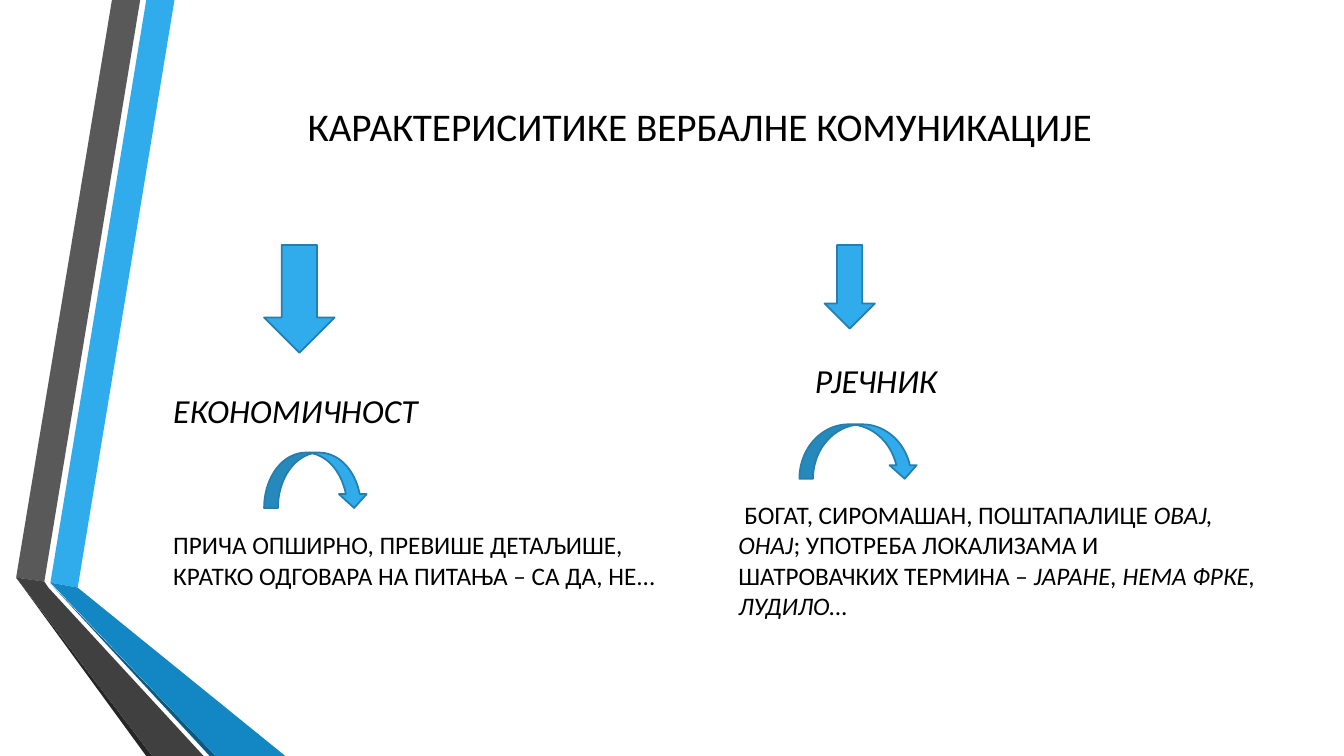
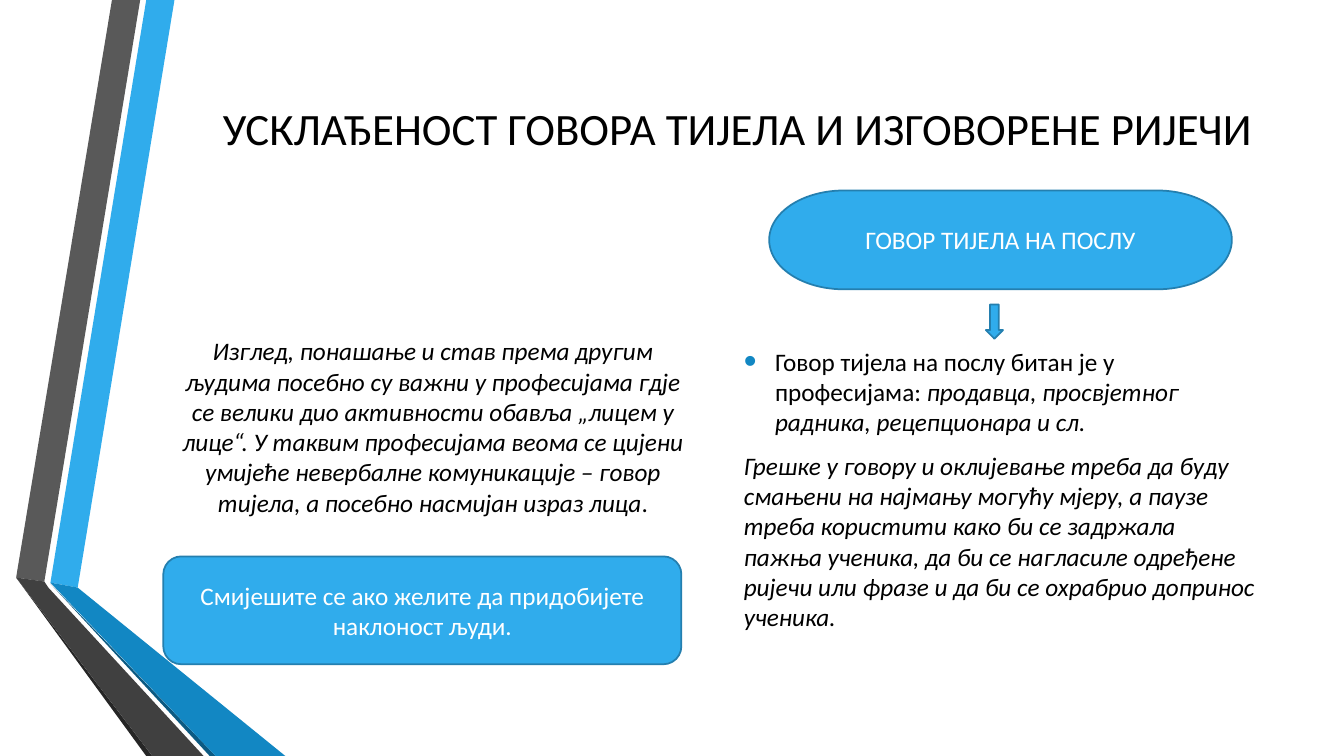
from lxml import etree
from pptx import Presentation
from pptx import util as u
from pptx.dml.color import RGBColor
from pptx.enum import shapes, text
from pptx.oxml import ns

# Shared style
SKY = RGBColor(0x30, 0xAC, 0xEC)
SKY_EDGE = RGBColor(0x24, 0x7F, 0xAF)
BLUE = RGBColor(0x12, 0x87, 0xC3)
NAVY = RGBColor(0x0C, 0x5A, 0x82)
GREY = RGBColor(0x59, 0x59, 0x59)
CHARCOAL = RGBColor(0x40, 0x40, 0x40)
SOOT = RGBColor(0x26, 0x26, 0x26)
BLACK = RGBColor(0, 0, 0)
WHITE = RGBColor(0xFF, 0xFF, 0xFF)
FONT = "Calibri"
BODY_SIZE, HEADING_SIZE = 18, 24
SHAPE = shapes.MSO_SHAPE

# Positions are percentages of the slide's width and height
LEFT, RIGHT, COLUMN = 12.15, 54.2, 40.13
RIBBONS = [
    (SKY, [(3.75, 77.07), (5.78, 77.73), (12.98, 0), (10.88, 0)]),
    (GREY, [(10.43, 0), (8.33, 0), (1.2, 76.4), (3.3, 76.93)]),
    (SOOT, [(1.2, 76.4), (10.88, 100), (11.33, 100)]),
    (NAVY, [(3.75, 77.2), (15.6, 100), (16.05, 100)]),
    (BLUE, [(3.75, 77.07), (16.05, 100), (21.23, 100), (5.78, 77.73)]),
    (CHARCOAL, [(1.2, 76.4), (11.33, 100), (15.15, 100), (3.6, 77.73), (3.3, 76.93)]),
]


class Deck:
    def __init__(self):
        self.presentation = Presentation()
        self.presentation.slide_width = u.Inches(13.33)
        self.presentation.slide_height = u.Inches(7.5)
        self.layout = self.presentation.slide_layouts[5]
        self.slide = None

    def place(self, x, y):
        return (u.Emu(int(self.presentation.slide_width * x / 100)),
                u.Emu(int(self.presentation.slide_height * y / 100)))

    def box(self, left, top, width, height):
        return self.place(left, top) + self.place(width, height)

    def add_slide(self, title, size, *area):
        first = self.slide is None
        self.slide = self.presentation.slides.add_slide(self.layout)
        if first:
            self.add_ribbons()
        shape = self.slide.shapes.title
        shape.left, shape.top, shape.width, shape.height = self.box(*area)
        self.prepare(shape.text_frame)
        self.fill_paragraph(shape.text_frame.paragraphs[0], [(title, False)], size,
                            align=text.PP_ALIGN.CENTER)

    def add_ribbons(self):
        """Draw the side ribbons and keep them on the layout, behind all slides."""
        for color, points in RIBBONS:
            start, *others = [self.place(*point) for point in points]
            builder = self.slide.shapes.build_freeform(*start)
            builder.add_line_segments(others, close=True)
            ribbon = builder.convert_to_shape()
            ribbon.shadow.inherit = False
            ribbon.fill.solid()
            ribbon.fill.fore_color.rgb = color
            ribbon.line.fill.background()
            self.layout.shapes._spTree.append(ribbon._element)

    def prepare(self, frame, anchor=text.MSO_ANCHOR.MIDDLE):
        frame.word_wrap = True
        frame.auto_size = text.MSO_AUTO_SIZE.NONE
        frame.vertical_anchor = anchor

    def fill_paragraph(self, paragraph, runs, size=BODY_SIZE, color=BLACK,
                       align=text.PP_ALIGN.LEFT, before=0):
        paragraph.alignment = align
        paragraph.space_before = u.Pt(before)
        font = paragraph.font
        font.name, font.size, font.color.rgb = FONT, u.Pt(size), color
        for words, italic in runs:
            run = paragraph.add_run()
            run.text = words
            run.font.italic = italic

    def add_text(self, *area, anchor=text.MSO_ANCHOR.MIDDLE):
        frame = self.slide.shapes.add_textbox(*self.box(*area)).text_frame
        self.prepare(frame, anchor)
        return frame

    def indent(self, paragraph, margin, first_line=0):
        properties = paragraph._p.get_or_add_pPr()
        properties.set("marL", str(u.Inches(margin)))
        properties.set("indent", str(u.Inches(first_line)))
        return properties

    def add_bullet(self, paragraph):
        properties = self.indent(paragraph, 0.31, -0.31)
        color = etree.SubElement(properties, ns.qn("a:buClr"))
        etree.SubElement(color, ns.qn("a:srgbClr"), val=str(BLUE))
        etree.SubElement(properties, ns.qn("a:buSzPct"), val="145000")
        etree.SubElement(properties, ns.qn("a:buFont"), typeface="Arial")
        etree.SubElement(properties, ns.qn("a:buChar"), char="•")

    def add_topic(self, left, top, heading, details, heading_indent=0, first_line=0):
        """A heading, room for a curved arrow, and the details below."""
        frame = self.add_text(left, top, COLUMN, 33.6, anchor=text.MSO_ANCHOR.TOP)
        title = frame.paragraphs[0]
        self.indent(title, heading_indent)
        self.fill_paragraph(title, [(heading, True)], HEADING_SIZE)
        body = frame.add_paragraph()
        self.indent(body, 0, first_line)
        self.fill_paragraph(body, details, before=71)

    def add_shape(self, kind, *area, label=None):
        shape = self.slide.shapes.add_shape(kind, *self.box(*area))
        shape.shadow.inherit = False
        shape.fill.solid()
        shape.fill.fore_color.rgb = SKY
        shape.line.color.rgb = SKY_EDGE
        shape.line.width = u.Pt(1.25)
        if label:
            self.prepare(shape.text_frame)
            self.fill_paragraph(shape.text_frame.paragraphs[0], [(label, False)],
                                color=WHITE, align=text.PP_ALIGN.CENTER)


def add_features(deck):
    deck.add_slide("КАРАКТЕРИСИТИКЕ ВЕРБАЛНЕ КОМУНИКАЦИЈЕ", 28, LEFT, 4.27, 79.8, 24.8)
    deck.add_topic(LEFT, 50.93, "ЕКОНОМИЧНОСТ", [
        ("ПРИЧА ОПШИРНО, ПРЕВИШЕ ДЕТАЉИШЕ, КРАТКО ОДГОВАРА НА ПИТАЊА – СА ДА, НЕ...", False),
    ])
    deck.add_topic(RIGHT, 46.93, "РЈЕЧНИК", [
        ("БОГАТ, СИРОМАШАН, ПОШТАПАЛИЦЕ ", False),
        ("ОВАЈ, ОНАЈ", True),
        ("; УПОТРЕБА ЛОКАЛИЗАМА И ШАТРОВАЧКИХ ТЕРМИНА – ", False),
        ("ЈАРАНЕ, НЕМА ФРКЕ, ЛУДИЛО...", True),
    ], heading_indent=0.76, first_line=0.06)
    deck.add_shape(SHAPE.DOWN_ARROW, 19.65, 32.4, 5.25, 14.27)
    deck.add_shape(SHAPE.DOWN_ARROW, 61.35, 32.4, 3.75, 11.07)
    deck.add_shape(SHAPE.CURVED_DOWN_ARROW, 19.65, 59.87, 7.73, 7.33)
    deck.add_shape(SHAPE.CURVED_DOWN_ARROW, 59.48, 56.13, 8.85, 7.2)


def add_body_language(deck):
    deck.add_slide("УСКЛАЂЕНОСТ ГОВОРА ТИЈЕЛА И ИЗГОВОРЕНЕ РИЈЕЧИ", 32, 15.45, 10, 78.9, 13.87)

    # Left column
    appearance = deck.add_text(LEFT, 43.07, COLUMN, 26.67)
    deck.fill_paragraph(appearance.paragraphs[0], [
        ("Изглед, понашање и став према другим људима посебно су важни у професијама "
         "гдје се велики дио активности обавља „лицем у лице“. У таквим професијама "
         "веома се цијени умијеће невербалне комуникације – говор тијела, а посебно "
         "насмијан израз лица", True),
        (".", False),
    ], align=text.PP_ALIGN.CENTER)
    deck.add_shape(SHAPE.FLOWCHART_ALTERNATE_PROCESS, LEFT, 73.6, 38.55, 14.27,
                   label="Смијешите се ако желите да придобијете наклоност људи.")

    # Right column
    deck.add_shape(SHAPE.FLOWCHART_TERMINATOR, 57.23, 25.2, 34.43, 13.07,
                   label="ГОВОР ТИЈЕЛА НА ПОСЛУ")
    deck.add_shape(SHAPE.DOWN_ARROW, 73.35, 40.27, 1.28, 4.53)
    advice = deck.add_text(54.6, 44.8, 39.75, 39.73)
    professions = advice.paragraphs[0]
    deck.add_bullet(professions)
    deck.fill_paragraph(professions, [
        ("Говор тијела на послу битан је у професијама: ", False),
        ("продавца, просвјетног радника, рецепционара и сл.", True),
    ])
    deck.fill_paragraph(advice.add_paragraph(), [
        ("Грешке у говору и оклијевање треба да буду смањени на најмању могућу мјеру, "
         "а паузе треба користити како би се задржала пажња ученика, да би се нагласиле "
         "одређене ријечи или фразе и да би се охрабрио допринос ученика.", True),
    ], before=9.6)


def main():
    deck = Deck()
    add_features(deck)
    add_body_language(deck)
    deck.presentation.save("out.pptx")


if __name__ == "__main__":
    main()
